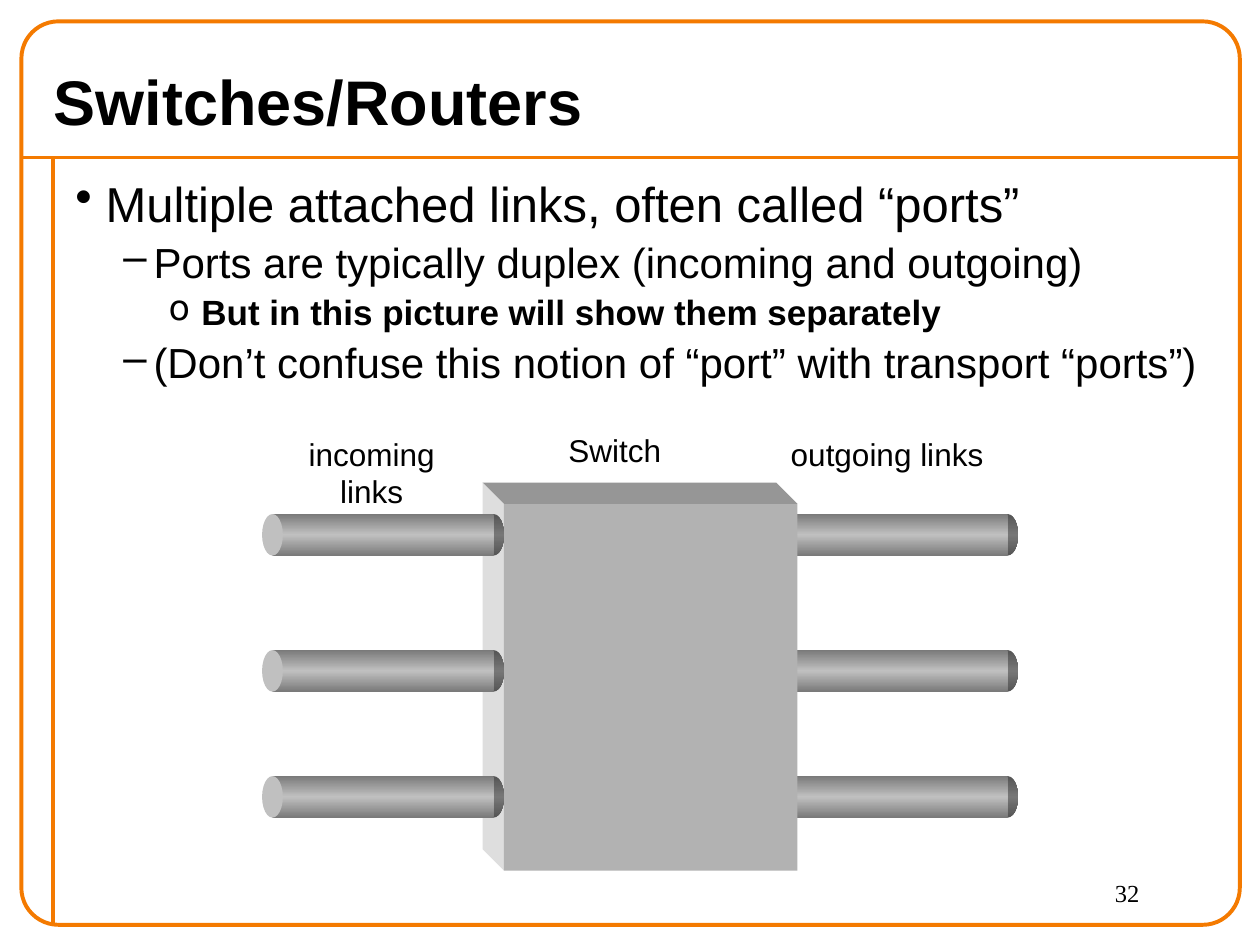
from copy import deepcopy
from dataclasses import dataclass

from lxml import etree
from pptx import Presentation
from pptx.dml.color import RGBColor
from pptx.enum.shapes import MSO_CONNECTOR, MSO_SHAPE
from pptx.enum.text import MSO_ANCHOR, PP_ALIGN
from pptx.oxml.ns import qn
from pptx.util import Inches, Pt

RECT, OVAL, ROUNDED = MSO_SHAPE.RECTANGLE, MSO_SHAPE.OVAL, MSO_SHAPE.ROUNDED_RECTANGLE
STRAIGHT = MSO_CONNECTOR.STRAIGHT
LEFT, CENTER = PP_ALIGN.LEFT, PP_ALIGN.CENTER
TOP, MIDDLE = MSO_ANCHOR.TOP, MSO_ANCHOR.MIDDLE


@dataclass(frozen=True)
class Theme:
    font: str = "Arial"
    number_font: str = "Times New Roman"
    text: str = "000000"
    frame: str = "F47A00"
    frame_width: float = 2.25
    pipe: tuple = ("7A7A7A", "C0C0C0", "7A7A7A")
    pipe_end: tuple = ("555555", "777777", "555555")
    pipe_cap: str = "C0C0C0"
    front: str = "B2B2B2"
    top: str = "969696"
    side: str = "DEDEDE"
    title_size: int = 36
    label_size: int = 18
    number_size: int = 14


THEME = Theme()

# level: (size, bold, bullet, left margin, hanging indent, space before)
LEVELS = {
    0: (28, False, "•", 0.24, 0.24, 0),
    1: (24, False, "–", 0.62, 0.24, 2.4),
    2: (20, True, "o", 1.0, 0.26, 2),
}
BULLETS = [
    (0, "Multiple attached links, often called “ports”"),
    (1, "Ports are typically duplex (incoming and outgoing)"),
    (2, "But in this picture will show them separately"),
    (1, "(Don’t confuse this notion of “port” with transport “ports”)"),
]


def rgb(color):
    return RGBColor.from_string(color)


def style_font(p, size, bold=False, name=THEME.font):
    p.font.size, p.font.bold, p.font.name = Pt(size), bold, name
    p.font.color.rgb = rgb(THEME.text)


def add_textbox(slide, box, anchor=TOP):
    tf = slide.shapes.add_textbox(*map(Inches, box)).text_frame
    tf.word_wrap = True
    tf.vertical_anchor = anchor
    return tf


def add_text(slide, box, text, size, bold=False, name=THEME.font, anchor=TOP):
    p = add_textbox(slide, box, anchor).paragraphs[0]
    p.text = text
    style_font(p, size, bold, name)


def add_label(slide, box, text):
    tf = add_textbox(slide, box)
    tf.margin_left = tf.margin_right = tf.margin_top = tf.margin_bottom = 0
    p = tf.paragraphs[0]
    p.text, p.alignment = text, CENTER
    style_font(p, THEME.label_size)


def fill_shape(sp, fill):
    """Fill with one colour, or with a vertical gradient of three."""
    sp.shadow.inherit = False
    sp.line.fill.background()
    if isinstance(fill, str):
        sp.fill.solid()
        sp.fill.fore_color.rgb = rgb(fill)
        return
    sp.fill.gradient()
    sp.fill.gradient_angle = 90
    stops = sp._element.spPr.find(".//" + qn("a:gsLst"))
    stops.append(deepcopy(stops[0]))
    for stop, color, position in zip(sp.fill.gradient_stops, fill, (0, 0.5, 1)):
        stop.color.rgb = rgb(color)
        stop.position = position


def add_rule(slide, x1, y1, x2, y2):
    line = slide.shapes.add_connector(STRAIGHT, *map(Inches, (x1, y1, x2, y2)))
    line.line.color.rgb = rgb(THEME.frame)
    line.line.width = Pt(THEME.frame_width)
    etree.SubElement(line._element.spPr, qn("a:effectLst"))


def draw_frame(slide, box):
    x, y, w, h = box
    rule_y, rule_x = y + 1.08, x + 0.25
    add_rule(slide, x, rule_y, x + w, rule_y)
    add_rule(slide, rule_x, rule_y, rule_x, y + h)
    sp = slide.shapes.add_shape(ROUNDED, *map(Inches, box))
    sp.adjustments[0] = 0.041
    sp.shadow.inherit = False
    sp.fill.background()
    sp.line.color.rgb = rgb(THEME.frame)
    sp.line.width = Pt(THEME.frame_width)


def draw_bullets(slide, box):
    tf = add_textbox(slide, box)
    for i, (level, text) in enumerate(BULLETS):
        size, bold, bullet, margin, hanging, before = LEVELS[level]
        p = tf.add_paragraph() if i else tf.paragraphs[0]
        p.text, p.level, p.alignment = text, level, LEFT
        p.space_before = Pt(before)
        style_font(p, size, bold)
        pPr = p._p.get_or_add_pPr()
        pPr.set("marL", str(Inches(margin)))
        pPr.set("indent", str(-Inches(hanging)))
        mark = etree.Element(qn("a:buChar"), char=bullet)
        pPr.find(qn("a:defRPr")).addprevious(mark)


def draw_pipe(slide, box):
    x, y, w, h = box
    cap = h / 2
    parts = [
        (OVAL, x + w - cap, cap, THEME.pipe_end),
        (RECT, x + cap / 2, w - cap, THEME.pipe),
        (OVAL, x, cap, THEME.pipe_cap),
    ]
    for kind, left, width, fill in parts:
        sp = slide.shapes.add_shape(kind, *map(Inches, (left, y, width, h)))
        fill_shape(sp, fill)


def draw_block(slide, box, depth):
    """Box front, with top and left faces reaching back by depth."""
    x, y, w, h = box
    right, bottom = x + w, y + h
    back_x, back_y = x - depth, y - depth
    faces = [
        (THEME.top, [(x, y), (back_x, back_y), (right - depth, back_y), (right, y)]),
        (THEME.side, [(x, y), (back_x, back_y), (back_x, bottom - depth), (x, bottom)]),
    ]
    for color, points in faces:
        start, *rest = [(Inches(px), Inches(py)) for px, py in points]
        builder = slide.shapes.build_freeform(*start)
        builder.add_line_segments(rest, close=True)
        fill_shape(builder.convert_to_shape(), color)
    fill_shape(slide.shapes.add_shape(RECT, *map(Inches, box)), THEME.front)


def draw_switch(slide, box):
    x, y, w, h = box
    pipe_w, pipe_h = 1.92, 0.33
    pipe_rows = [y + offset for offset in (0.08, 1.16, 2.16)]
    for row in pipe_rows:
        draw_pipe(slide, (x + w - 0.17, row, pipe_w, pipe_h))
    draw_block(slide, box, depth=0.17)
    for row in pipe_rows:
        draw_pipe(slide, (x - pipe_w, row, pipe_w, pipe_h))
    add_label(slide, (x - 1.75, y - 0.55, 1.4, 0.6), "incoming links")
    add_label(slide, (x + w - 0.09, y - 0.55, 1.6, 0.3), "outgoing links")
    add_label(slide, (x + 0.38, y - 0.58, 1, 0.3), "Switch")


def main():
    prs = Presentation()
    prs.slide_width, prs.slide_height = Inches(10), Inches(7.5)
    slide = prs.slides.add_slide(prs.slide_layouts[6])
    draw_frame(slide, (0.17, 0.17, 9.67, 7.17))
    add_text(slide, (0.33, 0.42, 8.82, 0.75), "Switches/Routers",
             THEME.title_size, bold=True, anchor=MIDDLE)
    draw_bullets(slide, (0.5, 1.33, 9.25, 6))
    add_text(slide, (8.75, 6.92, 1, 0.42), "32",
             THEME.number_size, name=THEME.number_font)
    draw_switch(slide, (4, 4, 2.33, 2.91))
    prs.save("out.pptx")


if __name__ == "__main__":
    main()
